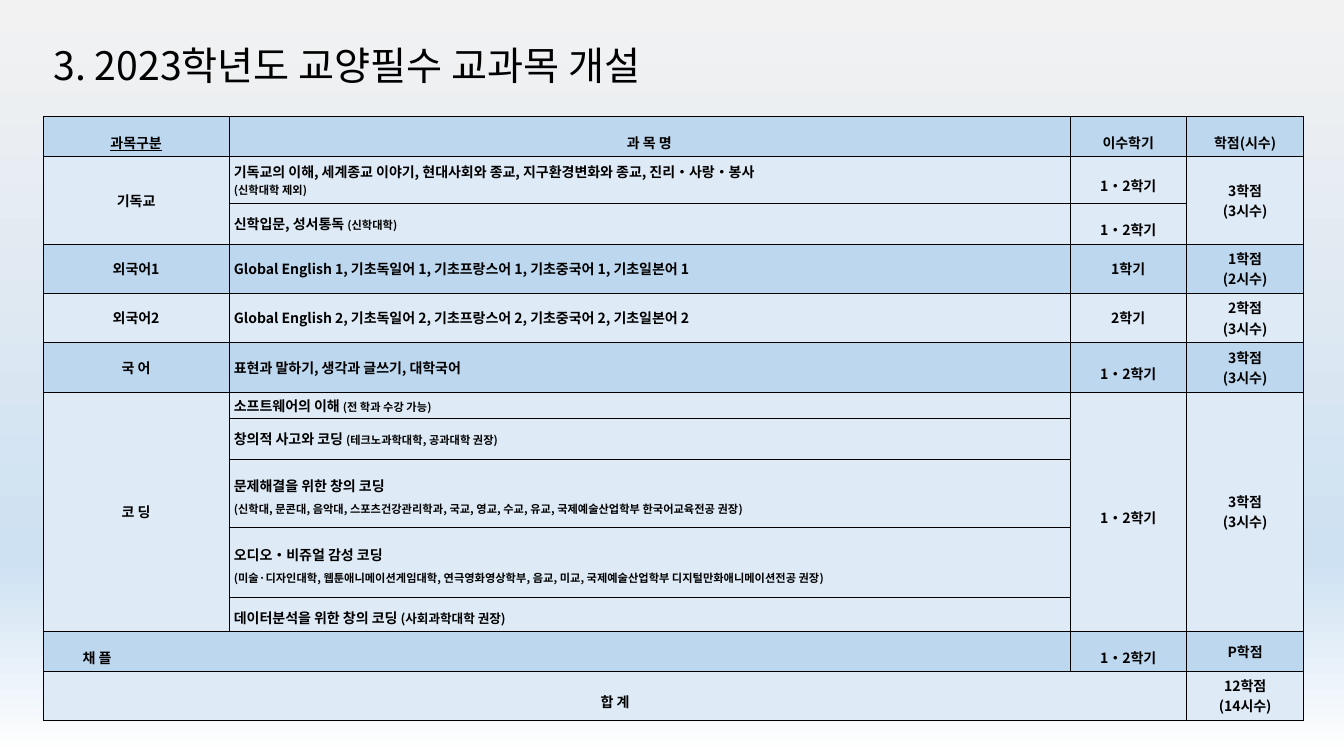
import pptx
import pptx.dml.color
import pptx.enum.text
import pptx.oxml
import pptx.oxml.ns
import pptx.util
from lxml import etree
from pptx.util import Inches

FONT = "Noto Sans CJK KR"
BLACK = pptx.dml.color.RGBColor(0x00, 0x00, 0x00)
DARK = pptx.dml.color.RGBColor(0xBD, 0xD7, 0xEE)
LIGHT = pptx.dml.color.RGBColor(0xDE, 0xEB, 0xF7)
BACKGROUND_STOPS = [
    (0, pptx.dml.color.RGBColor(0xF2, 0xF2, 0xF2)),
    (74, pptx.dml.color.RGBColor(0xCE, 0xE1, 0xF2)),
    (100, pptx.dml.color.RGBColor(0xFF, 0xFF, 0xFF)),
]
ALIGN = pptx.enum.text.PP_ALIGN
ANCHOR = pptx.enum.text.MSO_ANCHOR

COLUMN_WIDTHS = [1.84, 8.34, 1.16, 1.16]
ROW_HEIGHTS = [0.4, 0.47, 0.4, 0.49, 0.49, 0.49, 0.26, 0.41, 0.67, 0.7, 0.33, 0.4, 0.49]
MERGES = [((1, 0), (2, 0)), ((1, 3), (2, 3)), ((6, 0), (10, 0)), ((6, 2), (10, 2)),
          ((6, 3), (10, 3)), ((11, 0), (11, 1)), ((12, 0), (12, 2))]
DARK_ROWS = {0, 3, 5, 11}
LOOSE, MEDIUM, SINGLE = 1.6, 1.3, 1.0
BOTH_TERMS = ("1・2학기", LOOSE)
THREE_CREDITS = ("3학점\n(3시수)", SINGLE)
LANGUAGES = ["Global English", "기초독일어", "기초프랑스어", "기초중국어", "기초일본어"]


def language_row(level, credits):
    """Return the cells of one foreign language row."""
    courses = ", ".join(f"{language} {level}" for language in LANGUAGES)
    return [(f"외국어{level}", SINGLE), (courses, SINGLE), (f"{level}학기", SINGLE), (credits, SINGLE)]


ROWS = [
    [(heading, LOOSE) for heading in ("과목구분", "과 목 명", "이수학기", "학점(시수)")],
    [("기독교", SINGLE),
     ("기독교의 이해, 세계종교 이야기, 현대사회와 종교, 지구환경변화와 종교, 진리・사랑・봉사\n"
      "|(신학대학 제외)", SINGLE), BOTH_TERMS, THREE_CREDITS],
    [None, ("신학입문, 성서통독 |(신학대학)", SINGLE), BOTH_TERMS, None],
    language_row(1, "1학점\n(2시수)"),
    language_row(2, "2학점\n(3시수)"),
    [("국 어", SINGLE), ("표현과 말하기, 생각과 글쓰기, 대학국어", SINGLE), BOTH_TERMS, THREE_CREDITS],
    [("코 딩", SINGLE), ("소프트웨어의 이해 |(전 학과 수강 가능)", SINGLE), BOTH_TERMS, THREE_CREDITS],
    [None, ("창의적 사고와 코딩 |(테크노과학대학, 공과대학 권장)", SINGLE), None, None],
    [None, ("문제해결을 위한 창의 코딩\n|(신학대, 문콘대, 음악대, 스포츠건강관리학과, 국교, 영교, 수교, 유교, "
            "국제예술산업학부 한국어교육전공 권장)", MEDIUM), None, None],
    [None, ("오디오・비쥬얼 감성 코딩\n|(미술·디자인대학, 웹툰애니메이션게임대학, 연극영화영상학부, 음교, 미교, "
            "국제예술산업학부 디지털만화애니메이션전공 권장)", MEDIUM), None, None],
    [None, ("데이터분석을 위한 창의 코딩 |(사회과학대학 권장)", MEDIUM), None, None],
    [("채 플", LOOSE), None, BOTH_TERMS, ("P학점", SINGLE)],
    [("합 계", LOOSE), None, None, ("12학점\n(14시수)", SINGLE)],
]
CHAPEL_ROW, DATA_ROW = 11, 10


def set_attributes(target, values):
    """Set every attribute named in values on target."""
    for name, value in values.items():
        setattr(target, name, value)


def add_run(paragraph, text, **format_values):
    """Add a run in the slide font with the given font values."""
    run = paragraph.add_run()
    run.text = text
    set_attributes(run.font, {"name": FONT, **format_values})
    run.font.color.rgb = BLACK
    east_asian = etree.SubElement(run.font._element, pptx.oxml.ns.qn("a:ea"))
    east_asian.set("typeface", FONT)


def set_background(slide):
    """Fill the slide background with a vertical gradient."""
    fill = slide.background.fill
    fill.gradient()
    fill.gradient_angle = 270
    stop_list = slide._element.find(".//" + pptx.oxml.ns.qn("a:gsLst"))
    for stop in list(stop_list):
        stop_list.remove(stop)
    for position, color in BACKGROUND_STOPS:
        stop = etree.SubElement(stop_list, pptx.oxml.ns.qn("a:gs"), pos=str(position * 1000))
        etree.SubElement(stop, pptx.oxml.ns.qn("a:srgbClr"), val=str(color))


def add_title(slide, text):
    """Move the title placeholder and write the heading."""
    title = slide.shapes.title
    set_attributes(title, {"left": Inches(0.43), "top": Inches(0.36),
                           "width": Inches(7.17), "height": Inches(0.57)})
    set_attributes(title.text_frame, {
        "word_wrap": True, "vertical_anchor": ANCHOR.TOP,
        "auto_size": pptx.enum.text.MSO_AUTO_SIZE.SHAPE_TO_FIT_TEXT})
    paragraph = title.text_frame.paragraphs[0]
    paragraph.alignment = ALIGN.LEFT
    add_run(paragraph, text, size=pptx.util.Pt(28))


def set_borders(cell):
    """Draw a thin black line on each side of a cell."""
    properties = cell._tc.get_or_add_tcPr()
    for side in ("lnL", "lnR", "lnT", "lnB"):
        line = etree.SubElement(properties, pptx.oxml.ns.qn(f"a:{side}"), w=str(pptx.util.Pt(0.28)))
        fill = etree.SubElement(line, pptx.oxml.ns.qn("a:solidFill"))
        etree.SubElement(fill, pptx.oxml.ns.qn("a:srgbClr"), val=str(BLACK))


def write_cell(cell, text, spacing, alignment, note_size, underline):
    """Write lines into a cell, with the part after a bar as a small note."""
    for index, line in enumerate(text.split("\n")):
        paragraph = cell.text_frame.paragraphs[0] if index == 0 else cell.text_frame.add_paragraph()
        set_attributes(paragraph, {"alignment": alignment, "line_spacing": spacing})
        for part, size in zip(line.split("|"), (10, note_size)):
            if part:
                add_run(paragraph, part, size=pptx.util.Pt(size), bold=True, underline=underline)


def add_course_table(slide):
    """Add the table of required courses."""
    frame = slide.shapes.add_table(len(ROWS), len(COLUMN_WIDTHS), Inches(0.43), Inches(1.15),
                                   Inches(12.5), Inches(6))
    table = frame.table
    set_attributes(table, {"first_row": False, "horz_banding": False})
    for column, width in zip(table.columns, COLUMN_WIDTHS):
        column.width = Inches(width)
    for row, height in zip(table.rows, ROW_HEIGHTS):
        row.height = Inches(height)
    for start, end in MERGES:
        table.cell(*start).merge(table.cell(*end))
    for row_index, entries in enumerate(ROWS):
        for column_index, entry in enumerate(entries):
            cell = table.cell(row_index, column_index)
            set_attributes(cell, {
                "vertical_anchor": ANCHOR.MIDDLE, "margin_left": Inches(0.05),
                "margin_right": Inches(0.05), "margin_top": Inches(0.01),
                "margin_bottom": Inches(0.01)})
            set_borders(cell)
            cell.fill.solid()
            cell.fill.fore_color.rgb = DARK if row_index in DARK_ROWS else LIGHT
            if entry:
                is_course = column_index == 1 and row_index > 0
                is_chapel = column_index == 0 and row_index == CHAPEL_ROW
                alignment = ALIGN.JUSTIFY if is_course or is_chapel else ALIGN.CENTER
                note_size = 9 if row_index == DATA_ROW else 8
                write_cell(cell, *entry, alignment, note_size, row_index == column_index == 0)
    chapel = table.cell(CHAPEL_ROW, 0).text_frame.paragraphs[0]
    chapel._p.get_or_add_pPr().set("marL", str(Inches(0.34)))


def main():
    """Build the slide and save the presentation."""
    presentation = pptx.Presentation()
    set_attributes(presentation, {"slide_width": Inches(13.33), "slide_height": Inches(7.5)})
    slide = presentation.slides.add_slide(presentation.slide_layouts[5])
    set_background(slide)
    add_title(slide, "3. 2023학년도 교양필수 교과목 개설")
    add_course_table(slide)
    presentation.save("out.pptx")


if __name__ == "__main__":
    main()
